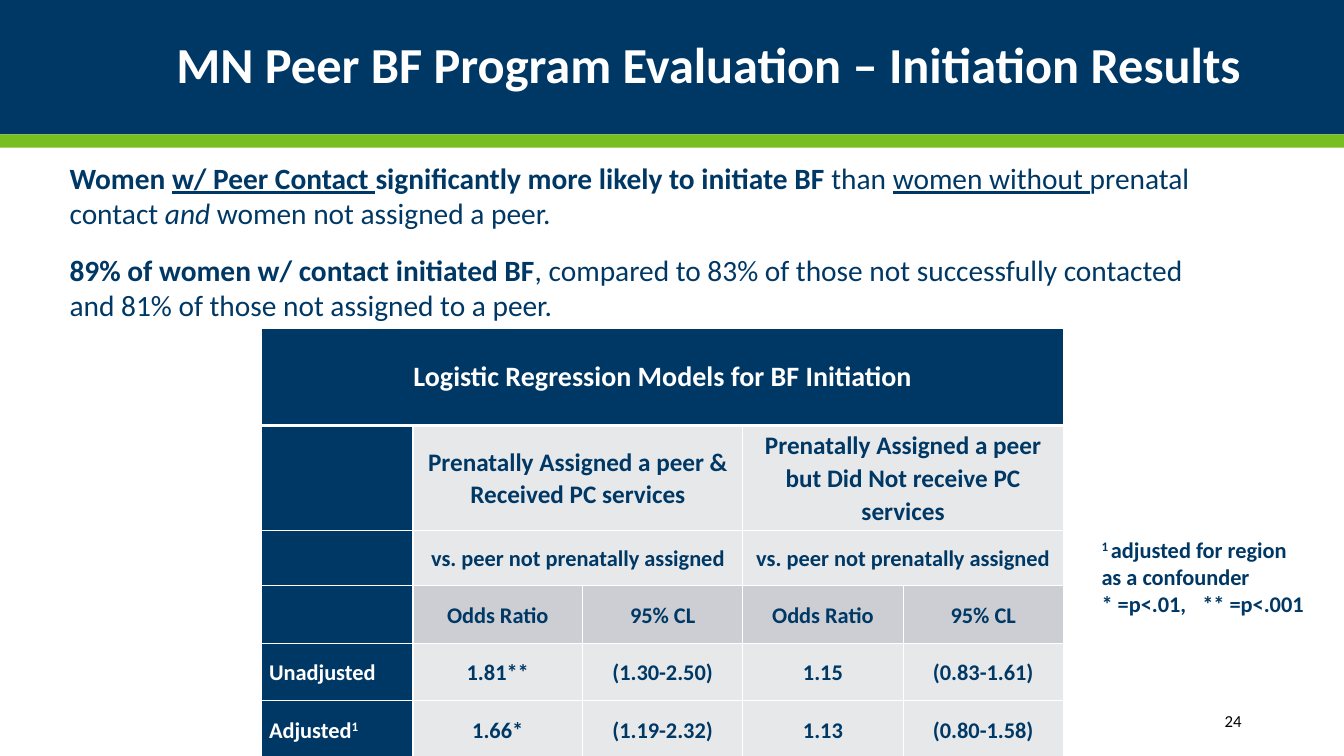
from lxml import etree
from pptx import Presentation
from pptx.dml.color import RGBColor
from pptx.enum.shapes import MSO_SHAPE
from pptx.enum.text import MSO_ANCHOR, MSO_AUTO_SIZE, PP_ALIGN
from pptx.oxml.ns import qn
from pptx.util import Cm, Pt

NAVY = RGBColor(0x00, 0x38, 0x65)
GREEN = RGBColor(0x78, 0xBE, 0x21)
PALE = RGBColor(0xE7, 0xE8, 0xEA)
GREY = RGBColor(0xCC, 0xCE, 0xD3)
WHITE = RGBColor(0xFF, 0xFF, 0xFF)
BLACK = RGBColor(0x00, 0x00, 0x00)
LEFT, CENTER, RIGHT = PP_ALIGN.LEFT, PP_ALIGN.CENTER, PP_ALIGN.RIGHT
MIDDLE, TOP = MSO_ANCHOR.MIDDLE, MSO_ANCHOR.TOP
RECTANGLE = MSO_SHAPE.RECTANGLE
NO_AUTOFIT = MSO_AUTO_SIZE.NONE


def add_run(p, text, size, color, raised=False, **formats):
    r = p.add_run()
    r.text = text
    r.font.color.rgb = color
    for name, value in {"name": "Calibri", "size": Pt(size), **formats}.items():
        setattr(r.font, name, value)
    if raised:
        r.font._element.set("baseline", "30000")


def place(sp, left, top, width, height, anchor):
    sp.left, sp.top, sp.width, sp.height = Cm(left), Cm(top), Cm(width), Cm(height)
    tf = sp.text_frame
    tf.word_wrap = True
    tf.auto_size = NO_AUTOFIT
    tf.vertical_anchor = anchor
    return tf


prs = Presentation()
prs.slide_width, prs.slide_height = Cm(33.87), Cm(19.05)
s = prs.slides.add_slide(prs.slide_layouts[1])

for i, (top, height, color) in enumerate([(0, 3.39, NAVY), (3.39, 0.33, GREEN)]):
    sp = s.shapes.add_shape(RECTANGLE, 0, Cm(top), prs.slide_width, Cm(height))
    sp.shadow.inherit = False
    sp.fill.solid()
    sp.fill.fore_color.rgb = color
    sp.line.fill.background()
    s.shapes._spTree.insert(2 + i, sp._element)

tf = place(s.shapes.title, 2.33, 0.42, 29.21, 2.54, MIDDLE)
p = tf.paragraphs[0]
p.alignment, p.line_spacing = RIGHT, 0.9
add_run(p, "MN Peer BF Program Evaluation – Initiation Results", 36, WHITE, bold=True)

findings = [
    [("Women ", {"bold": True}),
     ("w/ Peer Contact ", {"bold": True, "underline": True}),
     ("significantly more likely to initiate BF ", {"bold": True}),
     ("than ", {}),
     ("women without ", {"underline": True}),
     ("prenatal contact ", {}),
     ("and", {"italic": True}),
     (" women not assigned a peer.", {})],
    [("89% of women w/ contact initiated BF", {"bold": True}),
     (", compared to 83% of those not successfully contacted "
      "and 81% of those not assigned to a peer.", {})],
]
tf = place(s.placeholders[1], 0.23, 3.91, 31.12, 5.87, TOP)
for i, runs in enumerate(findings):
    p = tf.add_paragraph() if i else tf.paragraphs[0]
    p.level = 1
    p.space_before, p.space_after = Pt(5), Pt(10)
    pPr = p._p.get_or_add_pPr()
    pPr.set("marL", str(Cm(1.27)))
    pPr.set("indent", "0")
    etree.SubElement(pPr, qn("a:buNone"))
    for text, formats in runs:
        add_run(p, text, 21, NAVY, **formats)

tf = place(s.shapes.add_textbox(0, 0, 0, 0), 27.48, 17.65, 4.06, 1.02, MIDDLE)
tf.paragraphs[0].alignment = RIGHT
add_run(tf.paragraphs[0], "24", 12, BLACK)

versus = "vs. peer not prenatally assigned"
rows = [
    ["Logistic Regression Models for BF Initiation", "", "", "", ""],
    ["", "Prenatally Assigned a peer & Received PC services", "",
     "Prenatally Assigned a peer but Did Not receive PC services", ""],
    ["", versus, "", versus, ""],
    ["", "Odds Ratio", "95% CL", "Odds Ratio", "95% CL"],
    ["Unadjusted", "1.81**", "(1.30-2.50)", "1.15", "(0.83-1.61)"],
    ["Adjusted", "1.66*", "(1.19-2.32)", "1.13", "(0.80-1.58)"],
]
sizes = [20, 18, 16, 16, 16, 16]
row_heights = [2.44, 2.64, 1.4, 1.45, 1.45, 1.45]
col_widths = [3.81, 4.27, 4.04, 4.04, 4.04]
table = s.shapes.add_table(len(rows), len(col_widths), Cm(6.6), Cm(8.28),
                           Cm(sum(col_widths)), Cm(sum(row_heights))).table
table.horz_banding = False
for col, width in zip(table.columns, col_widths):
    col.width = Cm(width)
for row, height in zip(table.rows, row_heights):
    row.height = Cm(height)
for r1, c1, r2, c2 in [(0, 0, 0, 4), (1, 1, 1, 2), (1, 3, 1, 4), (2, 1, 2, 2), (2, 3, 2, 4)]:
    table.cell(r1, c1).merge(table.cell(r2, c2))

for i, texts in enumerate(rows):
    for j, text in enumerate(texts):
        cell = table.cell(i, j)
        tcPr = cell._tc.get_or_add_tcPr()
        for side in "LRTB":
            thick = (i, side) in [(0, "B"), (1, "T")]
            ln = etree.SubElement(tcPr, qn("a:ln" + side), w=str(Pt(3 if thick else 1)))
            fill = etree.SubElement(ln, qn("a:solidFill"))
            etree.SubElement(fill, qn("a:srgbClr"), val=str(WHITE))
        dark = i == 0 or j == 0
        cell.fill.solid()
        cell.fill.fore_color.rgb = NAVY if dark else GREY if i == 3 else PALE
        cell.vertical_anchor = MIDDLE
        cell.margin_left = cell.margin_right = Cm(0.18)
        cell.margin_top = cell.margin_bottom = 0
        if text:
            p = cell.text_frame.paragraphs[0]
            p.alignment = LEFT if i and j == 0 else CENTER
            p.line_spacing = 1.07 if i else 1.0
            color = WHITE if dark else NAVY
            add_run(p, text, sizes[i], color, bold=True)
            if text == "Adjusted":
                add_run(p, "1", sizes[i], color, raised=True, bold=True)

tf = place(s.shapes.add_textbox(0, 0, 0, 0), 27.51, 13.39, 5.66, 2.31, TOP)
notes = [[("1 ", True), ("adjusted for region", False)],
         [("as a confounder", False)],
         [("* =p<.01,\t** =p<.001", False)]]
for i, runs in enumerate(notes):
    p = tf.add_paragraph() if i else tf.paragraphs[0]
    for text, raised in runs:
        add_run(p, text, 16, NAVY, raised=raised, bold=True)

prs.save("out.pptx")
